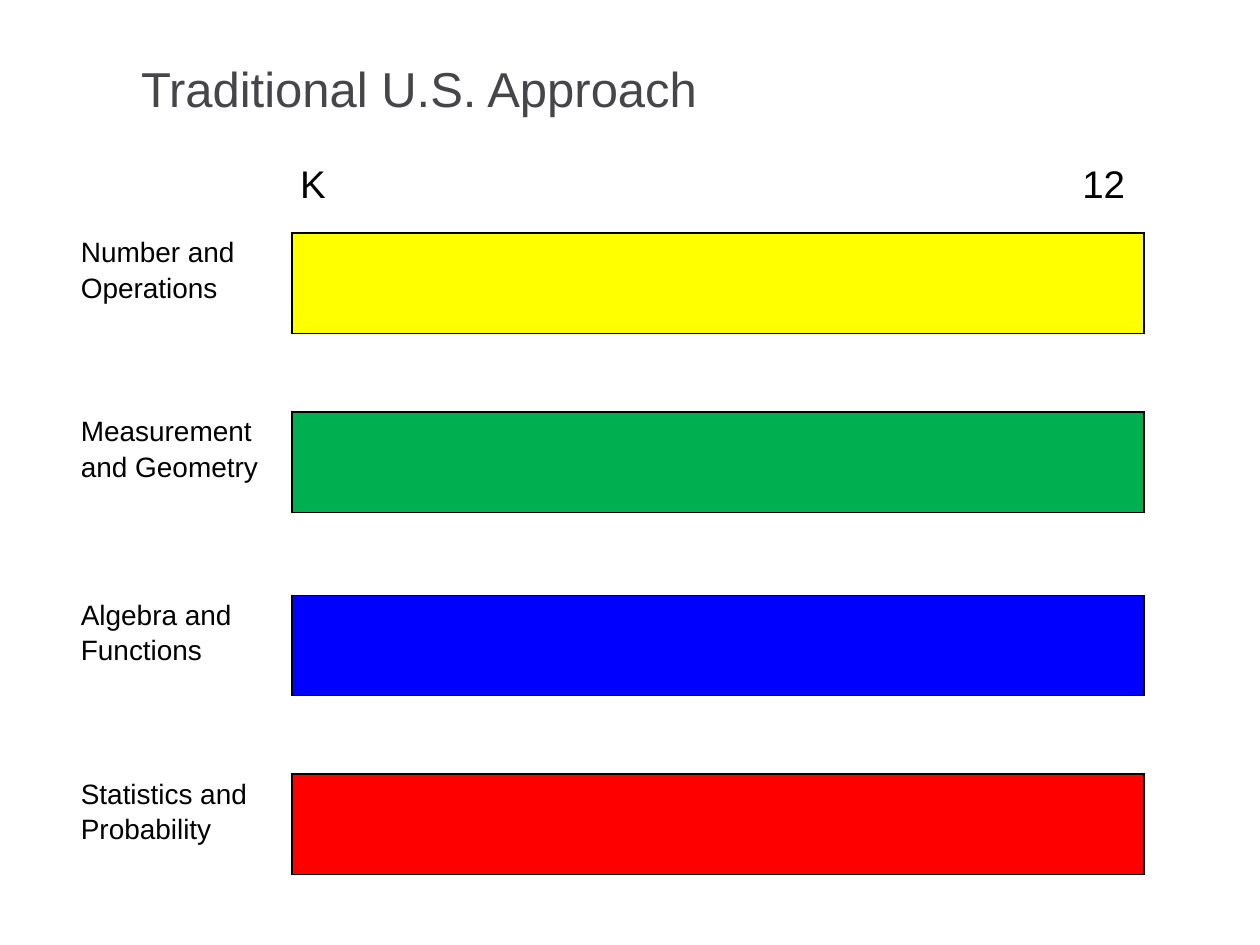
from dataclasses import dataclass

from lxml.etree import SubElement
from pptx import Presentation
from pptx.dml.color import RGBColor
from pptx.enum.text import MSO_ANCHOR
from pptx.oxml.ns import qn
from pptx.util import Pt


@dataclass(frozen=True)
class Theme:
    font: str = "Arial"
    title_size: float = 28
    grade_size: float = 22
    label_size: float = 16
    title_color: str = "46464A"
    text_color: str = "000000"
    border_color: str = "000000"
    border_width: float = 1
    line_spacing: float = 1.15
    plain_table_style: str = "{2D5ABB26-0587-4C30-8999-92F81FD0307C}"


STRANDS = [
    ("Number and Operations", "FFFF00"),
    ("Measurement and Geometry", "00B050"),
    ("Algebra and Functions", "0000FF"),
    ("Statistics and Probability", "FF0000"),
]
COLUMN_WIDTHS = [125.25, 486.75]
GAP_HEIGHTS = [43.2, 44.85, 47.4, 44.85]
BAR_HEIGHT = 57.4
GRADE_TAB = 471.5


class SlideBuilder:
    def __init__(self, slide, theme):
        self.slide = slide
        self.theme = theme

    def style(self, paragraph, size, color):
        paragraph.font.name = self.theme.font
        paragraph.font.size = Pt(size)
        paragraph.font.color.rgb = RGBColor.from_string(color)

    def title(self, text, left, top, width, height):
        frame = self.slide.shapes.add_textbox(
            Pt(left), Pt(top), Pt(width), Pt(height)).text_frame
        frame.word_wrap = True
        frame.vertical_anchor = MSO_ANCHOR.MIDDLE
        frame.text = text
        self.style(frame.paragraphs[0], self.theme.title_size, self.theme.title_color)

    def table(self, left, top, widths, heights):
        shape = self.slide.shapes.add_table(
            len(heights), len(widths), Pt(left), Pt(top),
            Pt(sum(widths)), Pt(sum(heights)))
        table = shape.table
        table.first_row = table.horz_banding = False
        properties = table._tbl.tblPr
        properties.find(qn("a:tableStyleId")).text = self.theme.plain_table_style
        for column, width in zip(table.columns, widths):
            column.width = Pt(width)
        for row, height in zip(table.rows, heights):
            row.height = Pt(height)
        return table

    def cell(self, cell, edges="", fill=None):
        """Draw the edges, given as letters in the order LRTB, then the fill."""
        properties = cell._tc.get_or_add_tcPr()
        for edge in edges:
            line = SubElement(properties, qn(f"a:ln{edge}"),
                              w=str(Pt(self.theme.border_width)))
            solid = SubElement(line, qn("a:solidFill"))
            SubElement(solid, qn("a:srgbClr"), val=self.theme.border_color)
        if fill:
            cell.fill.solid()
            cell.fill.fore_color.rgb = RGBColor.from_string(fill)
        else:
            cell.fill.background()

    def cell_text(self, cell, text, size):
        cell.margin_left = cell.margin_right = Pt(4.5)
        cell.margin_top = cell.margin_bottom = 0
        cell.text = text
        paragraph = cell.text_frame.paragraphs[0]
        paragraph.line_spacing = self.theme.line_spacing
        self.style(paragraph, size, self.theme.text_color)
        return paragraph

    def right_tab(self, paragraph, position):
        tabs = SubElement(paragraph._p.get_or_add_pPr(), qn("a:tabLst"))
        SubElement(tabs, qn("a:tab"), pos=str(Pt(position)), algn="r")
        # The schema wants the tab list ahead of the default run properties.
        defaults = paragraph._p.pPr.find(qn("a:defRPr"))
        if defaults is not None:
            defaults.addprevious(tabs)

    def strand_table(self, left, top):
        heights = [height for gap in GAP_HEIGHTS for height in (gap, BAR_HEIGHT)]
        table = self.table(left, top, COLUMN_WIDTHS, heights)
        for index, (label, color) in enumerate(STRANDS):
            gap_row, bar_row = 2 * index, 2 * index + 1
            self.cell(table.cell(gap_row, 0))
            self.cell(table.cell(gap_row, 1), "TB" if index else "B")
            self.cell(table.cell(bar_row, 0), "R")
            self.cell(table.cell(bar_row, 1), "LRTB", color)
            self.cell_text(table.cell(bar_row, 0), label, self.theme.label_size)
        grades = self.cell_text(table.cell(0, 1), "K\t12", self.theme.grade_size)
        self.right_tab(grades, GRADE_TAB)


def main():
    presentation = Presentation()
    presentation.slide_width, presentation.slide_height = Pt(720), Pt(540)
    slide = presentation.slides.add_slide(presentation.slide_layouts[6])
    builder = SlideBuilder(slide, Theme())
    builder.strand_table(41.75, 90)
    builder.title("Traditional U.S. Approach", 73.5, 8, 564, 84)
    presentation.save("out.pptx")


if __name__ == "__main__":
    main()
